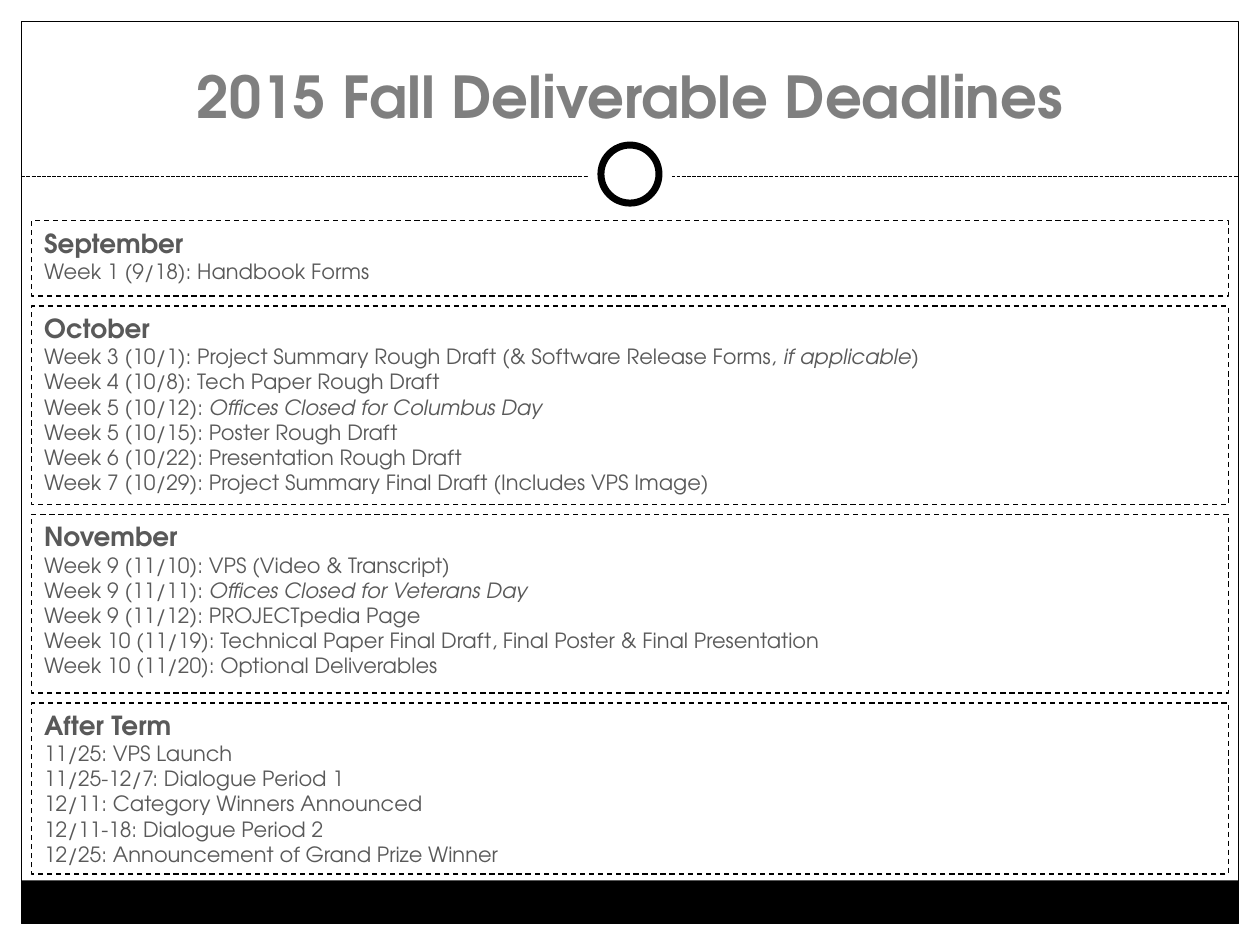
"""Build the slide of fall deliverable deadlines, one dashed box per period."""
import pptx
import pptx.dml.color
import pptx.enum.dml
import pptx.enum.shapes
import pptx.enum.text
import pptx.oxml
import pptx.util
from pptx.util import Cm

heading = "2015 Fall Deliverable Deadlines"
periods = [
    ("September", 1.52, [("Week 1 (9/18): Handbook Forms",)]),
    ("October", 4.0, [
        ("Week 3 (10/1): Project Summary Rough Draft (& Software Release Forms, ",
         "if applicable", ")"),
        ("Week 4 (10/8): Tech Paper Rough Draft",),
        ("Week 5 (10/12): ", "Offices Closed for Columbus Day"),
        ("Week 5 (10/15): Poster Rough Draft",),
        ("Week 6 (10/22): Presentation Rough Draft",),
        ("Week 7 (10/29): Project Summary Final Draft (Includes VPS Image)",),
    ]),
    ("November", 3.6, [
        ("Week 9 (11/10): VPS (Video & Transcript)",),
        ("Week 9 (11/11): ", "Offices Closed for Veterans Day"),
        ("Week 9 (11/12): PROJECTpedia Page",),
        ("Week 10 (11/19): Technical Paper Final Draft, Final Poster & Final Presentation",),
        ("Week 10 (11/20): Optional Deliverables",),
    ]),
    ("After Term", 3.45, [
        ("11/25: VPS Launch",),
        ("11/25-12/7: Dialogue Period 1",),
        ("12/11: Category Winners Announced",),
        ("12/11-18: Dialogue Period 2",),
        ("12/25: Announcement of Grand Prize Winner",),
    ]),
]

FONT = "TeX Gyre Adventor"
heading_format = {"name": FONT, "size": pptx.util.Pt(33), "bold": True}
month_format = {"name": FONT, "size": pptx.util.Pt(15), "bold": True}
deadline_format = {"name": FONT, "size": pptx.util.Pt(12), "bold": False}
box_text_format = {"word_wrap": True, "vertical_anchor": pptx.enum.text.MSO_ANCHOR.TOP}
heading_text_format = {"word_wrap": True, "vertical_anchor": pptx.enum.text.MSO_ANCHOR.BOTTOM}

WIDTH, HEIGHT = 25.4, 19.05
MARGIN = 0.43
RULE_TOP = 3.56
RING_CENTRE = 3.51
BOX_LEFT, BOX_TOP, BOX_GAP = 0.64, 4.45, 0.2
HANGING = Cm(4.45)
SHAPES = pptx.enum.shapes.MSO_SHAPE
DASHES = pptx.enum.dml.MSO_LINE


def colour(value):
    return pptx.dml.color.RGBColor.from_string(value)


def apply(target, settings):
    for attribute, value in settings.items():
        setattr(target, attribute, value)


def draw_line(line, weight, dash=None):
    line.color.rgb = colour("000000")
    line.width = pptx.util.Pt(weight)
    if dash:
        line.dash_style = dash


def add_outline(slide, kind, left, top, width, height, fill=None, weight=None, dash=None):
    outline = slide.shapes.add_shape(kind, Cm(left), Cm(top), Cm(width), Cm(height))
    outline.shadow.inherit = False
    if fill:
        outline.fill.solid()
        outline.fill.fore_color.rgb = colour(fill)
    else:
        outline.fill.background()
    if weight:
        draw_line(outline.line, weight, dash)
    else:
        outline.line.fill.background()
    return outline


def add_words(paragraph, words, settings, tint, italic=False):
    run = paragraph.add_run()
    run.text = words
    apply(run.font, {**settings, "italic": italic})
    run.font.color.rgb = colour(tint)


def add_period(slide, top, month, height, deadlines):
    box = add_outline(slide, SHAPES.RECTANGLE, BOX_LEFT, top, WIDTH - 2 * BOX_LEFT, height,
                      weight=0.75, dash=DASHES.DASH)
    apply(box.text_frame, box_text_format)
    title = box.text_frame.paragraphs[0]
    title.alignment = pptx.enum.text.PP_ALIGN.LEFT
    add_words(title, month, month_format, "595959")
    for parts in deadlines:
        deadline = box.text_frame.add_paragraph()
        deadline.alignment = pptx.enum.text.PP_ALIGN.LEFT
        indents = deadline._p.get_or_add_pPr()
        indents.set("marL", str(HANGING))
        indents.set("indent", str(-HANGING))
        for index, words in enumerate(parts):
            add_words(deadline, words, deadline_format, "595959", italic=index == 1)


def add_frame(slide):
    inner = WIDTH - 2 * MARGIN
    add_outline(slide, SHAPES.RECTANGLE, MARGIN, 17.75, inner, 0.87, fill="000000")
    add_outline(slide, SHAPES.RECTANGLE, MARGIN, MARGIN, inner, HEIGHT - 2 * MARGIN, weight=0.75)
    rule = slide.shapes.add_connector(
        pptx.enum.shapes.MSO_CONNECTOR.STRAIGHT,
        Cm(MARGIN), Cm(RULE_TOP), Cm(WIDTH - MARGIN), Cm(RULE_TOP))
    draw_line(rule.line, 0.75, DASHES.SQUARE_DOT)
    rule._element.spPr.append(pptx.oxml.parse_xml(
        '<a:effectLst xmlns:a="http://schemas.openxmlformats.org/drawingml/2006/main"/>'))
    for size, weight in ((1.7, None), (1.17, 4)):
        add_outline(slide, SHAPES.OVAL, (WIDTH - size) / 2, RING_CENTRE - size / 2,
                    size, size, fill="FFFFFF", weight=weight)


def main():
    deck = pptx.Presentation()
    apply(deck, {"slide_width": Cm(WIDTH), "slide_height": Cm(HEIGHT)})
    slide = deck.slides.add_slide(deck.slide_layouts[6])
    add_frame(slide)

    banner = slide.shapes.add_textbox(Cm(0.84), Cm(0.64), Cm(WIDTH - 2 * 0.84), Cm(2.11))
    apply(banner.text_frame, heading_text_format)
    banner.text_frame.paragraphs[0].alignment = pptx.enum.text.PP_ALIGN.CENTER
    add_words(banner.text_frame.paragraphs[0], heading, heading_format, "7F7F7F")

    top = BOX_TOP
    for month, height, deadlines in periods:
        add_period(slide, top, month, height, deadlines)
        top += height + BOX_GAP
    deck.save("out.pptx")


if __name__ == "__main__":
    main()
